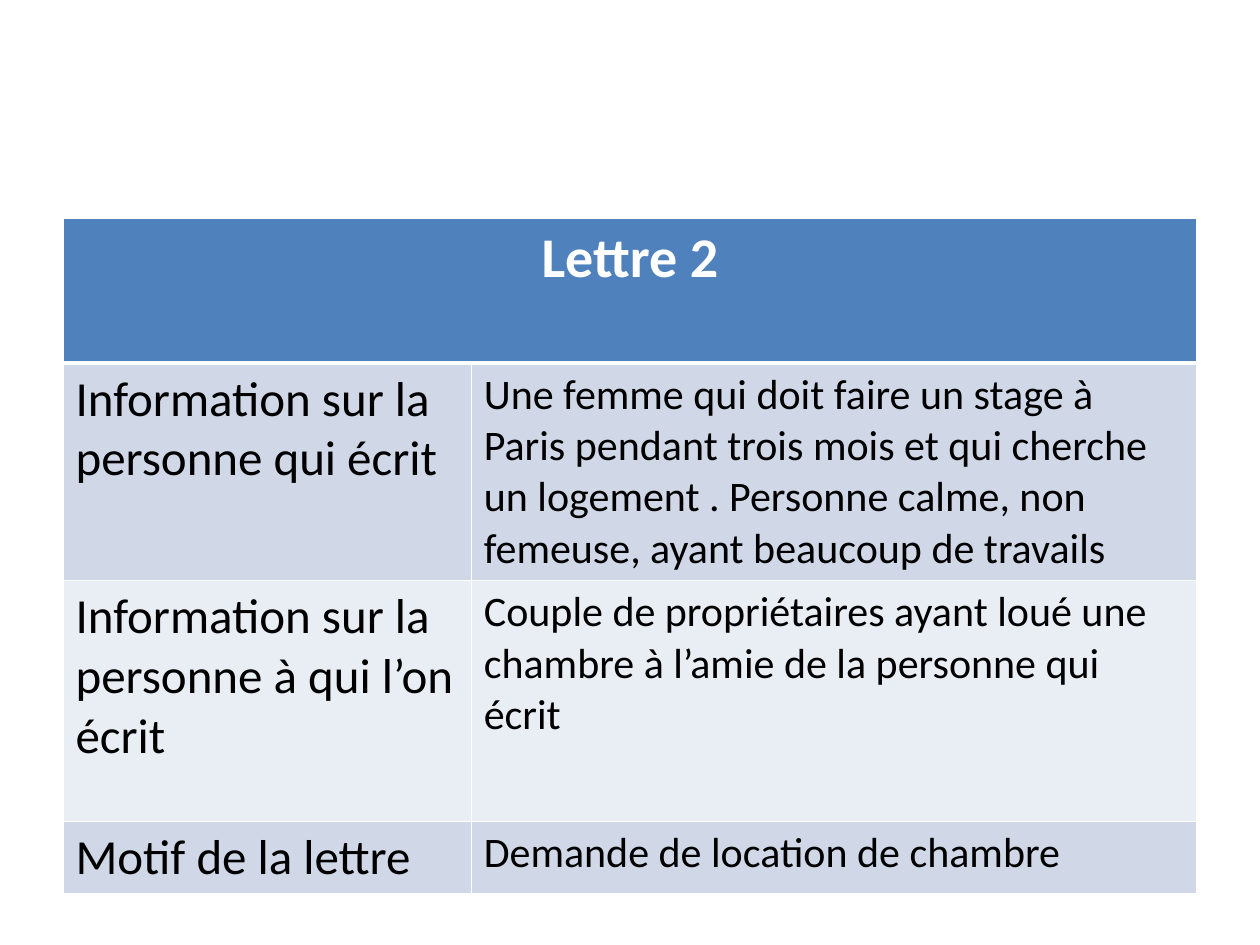
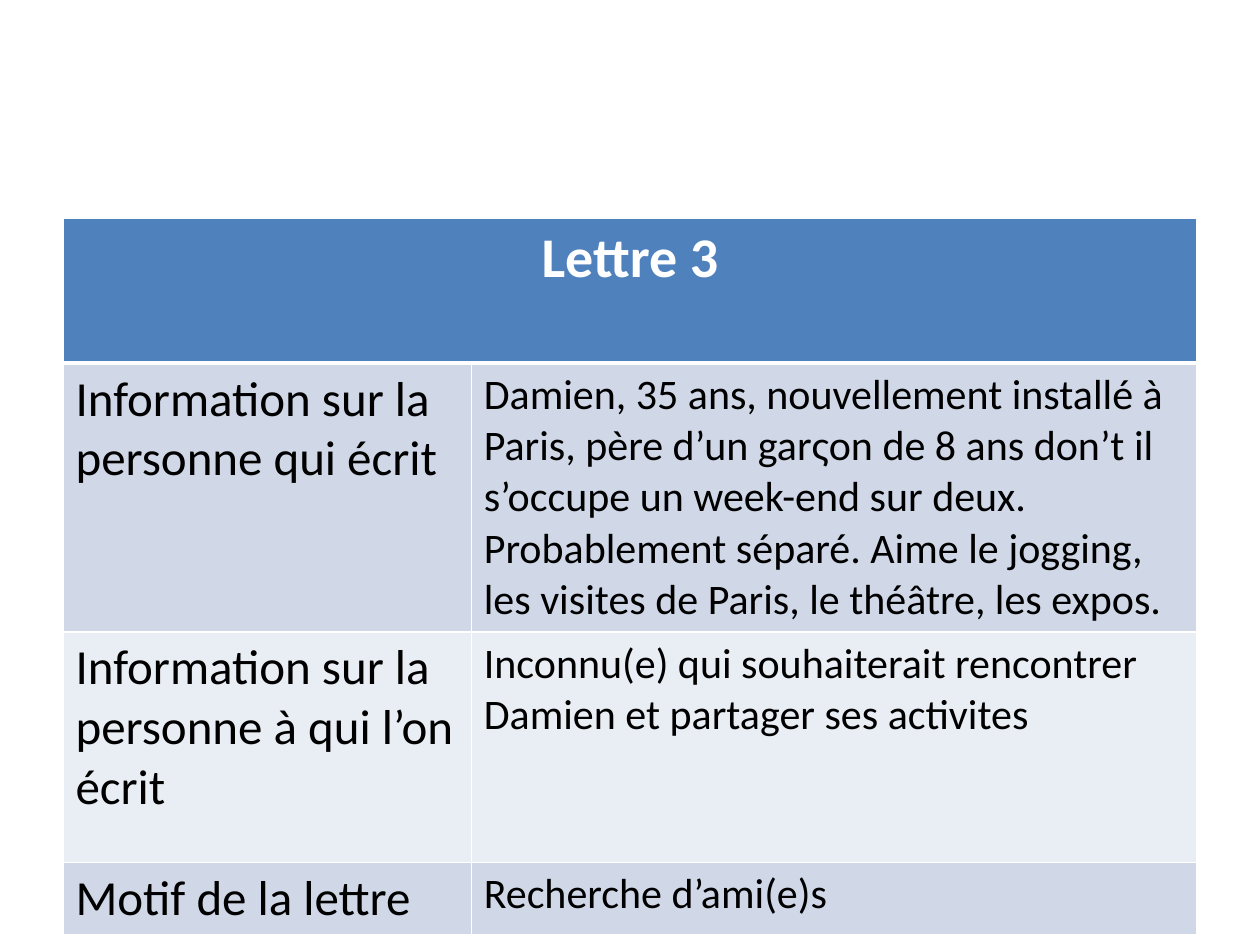
import lxml.etree
import pptx
import pptx.dml.color
import pptx.enum.text
import pptx.oxml.ns
import pptx.util
from pptx.util import Cm

HEADER_BLUE = pptx.dml.color.RGBColor(0x4F, 0x81, 0xBD)
BAND_DARK = pptx.dml.color.RGBColor(0xD0, 0xD8, 0xE8)
BAND_LIGHT = pptx.dml.color.RGBColor(0xE9, 0xED, 0xF4)
WHITE = pptx.dml.color.RGBColor(0xFF, 0xFF, 0xFF)
BLACK = pptx.dml.color.RGBColor(0x00, 0x00, 0x00)

QUESTIONS = [
    "Information sur la personne qui écrit",
    "Information sur la personne à qui l’on écrit",
    "Motif de la lettre",
]

# Title, answers to the questions, heights of the answer rows in cm
LETTERS = [
    ("Lettre 2",
     ["Une femme qui doit faire un stage à Paris pendant trois mois et qui "
      "cherche un logement . Personne calme, non femeuse, ayant beaucoup de travails",
      "Couple de propriétaires ayant loué une chambre à l’amie de la personne qui écrit",
      "Demande de location de chambre"],
     [4.37, 4.85, 1.45]),
    ("Lettre 3",
     ["Damien, 35 ans, nouvellement installé à Paris, père d’un garςon de 8 ans "
      "don’t il s’occupe un week-end sur deux. Probablement séparé. Aime le "
      "jogging, les visites de Paris, le théâtre, les expos.",
      "Inconnu(e) qui souhaiterait rencontrer Damien et partager ses activites",
      "Recherche d’ami(e)s"],
     [5.41, 4.65, 1.45]),
]


class LetterDeck:
    font_name = "Calibri"
    left, top = Cm(1.27), Cm(4.4)
    column_widths = [Cm(8.23), Cm(14.63)]
    header_height = Cm(2.92)

    def __init__(self):
        self.presentation = pptx.Presentation()
        self.presentation.slide_width = Cm(25.4)
        self.presentation.slide_height = Cm(19.05)
        self.slide = None

    def add_slide(self):
        self.slide = self.presentation.slides.add_slide(self.presentation.slide_layouts[6])

    def add_borders(self, cell, top=1, bottom=1):
        """Draw white borders; widths are in points. Call before filling the cell."""
        properties = cell._tc.get_or_add_tcPr()
        for side, width in (("L", 1), ("R", 1), ("T", top), ("B", bottom)):
            line = lxml.etree.SubElement(properties, pptx.oxml.ns.qn(f"a:ln{side}"),
                                         w=str(pptx.util.Pt(width)))
            fill = lxml.etree.SubElement(line, pptx.oxml.ns.qn("a:solidFill"))
            lxml.etree.SubElement(fill, pptx.oxml.ns.qn("a:srgbClr"), val=str(WHITE))

    def fill_cell(self, cell, color):
        cell.fill.solid()
        cell.fill.fore_color.rgb = color

    def write_cell(self, cell, text, size, color=BLACK, bold=False,
                   alignment=pptx.enum.text.PP_ALIGN.LEFT):
        cell.text = text
        paragraph = cell.text_frame.paragraphs[0]
        paragraph.alignment = alignment
        paragraph.font.name = self.font_name
        paragraph.font.size = pptx.util.Pt(size)
        paragraph.font.bold = bold
        paragraph.font.color.rgb = color

    def add_letter_table(self, title, answers, answer_heights):
        heights = [self.header_height] + [Cm(height) for height in answer_heights]
        table = self.slide.shapes.add_table(
            len(heights), len(self.column_widths), self.left, self.top,
            sum(self.column_widths), sum(heights)).table
        for column, width in zip(table.columns, self.column_widths):
            column.width = width
        for index, (row, height) in enumerate(zip(table.rows, heights)):
            row.height = height
            color = HEADER_BLUE if index == 0 else (BAND_LIGHT, BAND_DARK)[index % 2]
            for cell in row.cells:
                self.add_borders(cell, top=3 if index == 1 else 1,
                                 bottom=3 if index == 0 else 1)
                self.fill_cell(cell, color)

        table.cell(0, 0).merge(table.cell(0, 1))
        self.write_cell(table.cell(0, 0), title, 32, WHITE, True,
                        pptx.enum.text.PP_ALIGN.CENTER)
        for index, (question, answer) in enumerate(zip(QUESTIONS, answers), start=1):
            self.write_cell(table.cell(index, 0), question, 28)
            self.write_cell(table.cell(index, 1), answer, 24)


def main():
    deck = LetterDeck()
    for title, answers, answer_heights in LETTERS:
        deck.add_slide()
        deck.add_letter_table(title, answers, answer_heights)
    deck.presentation.save("out.pptx")


if __name__ == "__main__":
    main()
